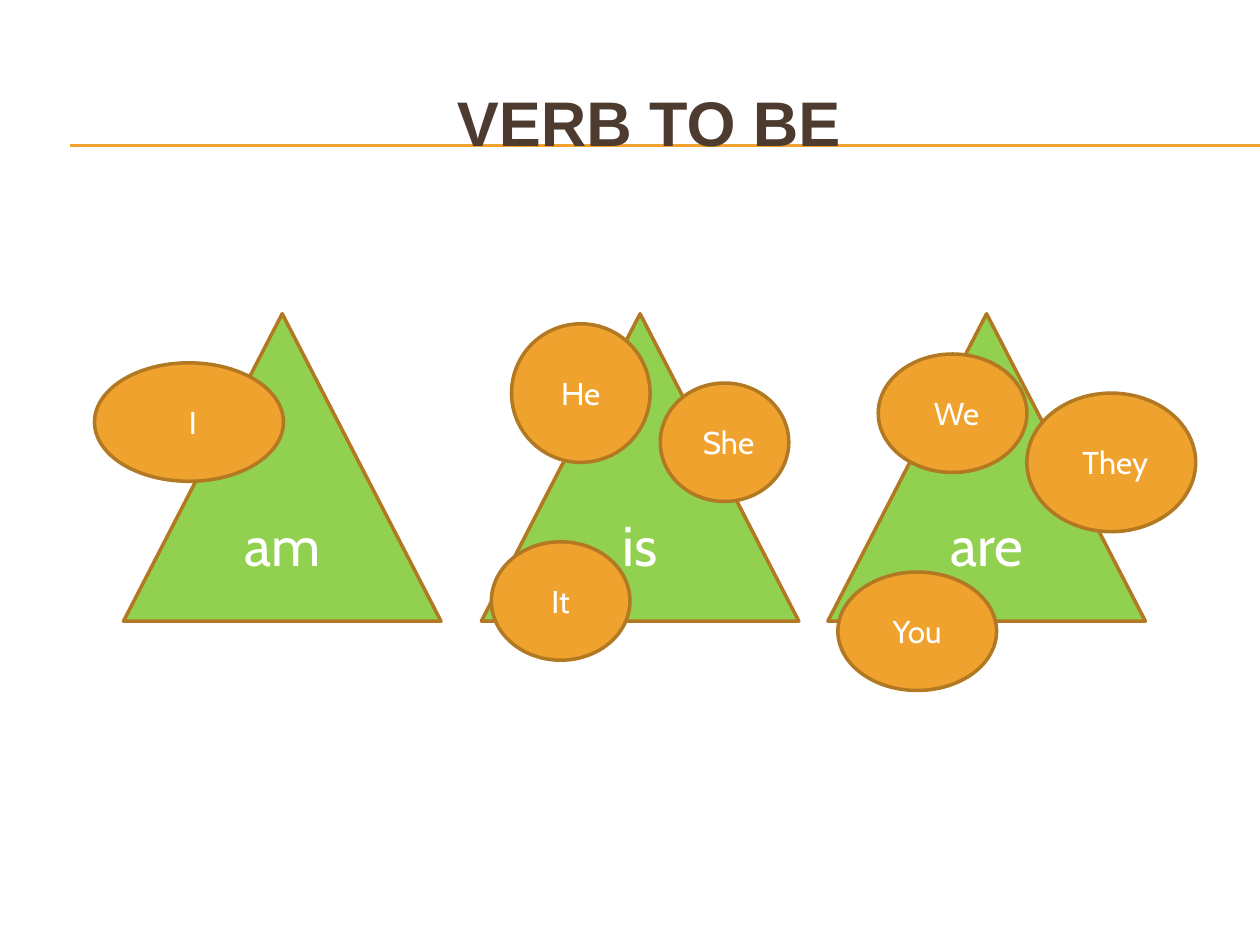
from dataclasses import dataclass

from lxml import etree
from pptx import Presentation
from pptx.dml.color import RGBColor
from pptx.enum.shapes import MSO_CONNECTOR, MSO_SHAPE
from pptx.enum.text import MSO_ANCHOR, PP_ALIGN
from pptx.oxml.ns import qn
from pptx.shapes.autoshape import Shape
from pptx.slide import Slide
from pptx.util import Pt

TRIANGLE = MSO_SHAPE.ISOSCELES_TRIANGLE
ELLIPSE = MSO_SHAPE.OVAL
STRAIGHT = MSO_CONNECTOR.STRAIGHT
CENTER = PP_ALIGN.CENTER
MIDDLE = MSO_ANCHOR.MIDDLE


@dataclass(frozen=True)
class Theme:
    orange: RGBColor = RGBColor(0xF0, 0xA2, 0x2E)
    green: RGBColor = RGBColor(0x92, 0xD0, 0x50)
    outline: RGBColor = RGBColor(0xB2, 0x78, 0x22)
    brown: RGBColor = RGBColor(0x4E, 0x3B, 0x30)
    white: RGBColor = RGBColor(0xFF, 0xFF, 0xFF)
    title_font: str = "Arial"
    body_font: str = "Cabin"
    title_size: float = 36
    verb_size: float = 32
    pronoun_size: float = 18
    outline_width: float = 2
    rule_width: float = 0.75


@dataclass(frozen=True)
class Label:
    text: str
    left: float
    top: float
    width: float
    height: float


THEME = Theme()
PAGE_WIDTH, PAGE_HEIGHT = 720, 540
RULE_LEFT = 40.3
RULE_TOPS = (82.8, 83.5)
TITLE = Label("VERB TO BE ", 23.76, 36, 684, 66.24)
VERBS = [
    Label(text, left, 179.28, 181.44, 175.68)
    for text, left in (("am", 70.56), ("is", 275.04), ("are", 473.04))
]
PRONOUNS = [
    Label("He", 292.32, 185.04, 79.2, 79.2),
    Label("She ", 377.28, 218.88, 73.44, 67.68),
    Label("It", 280.8, 309.6, 79.2, 67.68),
    Label("I ", 54, 207.36, 108, 67.68),
    Label("You", 478.8, 326.88, 90.72, 67.68),
    Label("We ", 501.84, 202.32, 84.96, 67.68),
    Label("They ", 586.8, 224.64, 96.48, 79.2),
]


def write_text(box: Shape, text: str, font: str, size: float,
               color: RGBColor, bold: bool = False) -> None:
    frame = box.text_frame
    frame.text = text
    frame.word_wrap = True
    frame.vertical_anchor = MIDDLE
    para = frame.paragraphs[0]
    para.alignment = CENTER
    para._p.get_or_add_pPr().set("rtl", "1")
    span = para.runs[0]
    span.font.name = font
    span.font.size = Pt(size)
    span.font.bold = bold
    span.font.color.rgb = color


def draw_rule(page: Slide, top: float) -> None:
    rule = page.shapes.add_connector(
        STRAIGHT, Pt(RULE_LEFT), Pt(top), Pt(PAGE_WIDTH), Pt(top))
    rule.line.color.rgb = THEME.orange
    rule.line.width = Pt(THEME.rule_width)
    etree.SubElement(rule._element.spPr, qn("a:effectLst"))


def draw_title(page: Slide, title: Label) -> None:
    box = page.shapes.add_textbox(
        Pt(title.left), Pt(title.top), Pt(title.width), Pt(title.height))
    write_text(box, title.text, THEME.title_font, THEME.title_size,
               THEME.brown, bold=True)


def draw_label(page: Slide, label: Label, kind: MSO_SHAPE,
               fill: RGBColor, size: float) -> None:
    shape = page.shapes.add_shape(
        kind, Pt(label.left), Pt(label.top), Pt(label.width), Pt(label.height))
    shape.shadow.inherit = False
    shape.fill.solid()
    shape.fill.fore_color.rgb = fill
    shape.line.color.rgb = THEME.outline
    shape.line.width = Pt(THEME.outline_width)
    write_text(shape, label.text, THEME.body_font, size, THEME.white)


def main() -> None:
    deck = Presentation()
    deck.slide_width, deck.slide_height = Pt(PAGE_WIDTH), Pt(PAGE_HEIGHT)
    page = deck.slides.add_slide(deck.slide_layouts[6])
    for top in RULE_TOPS:
        draw_rule(page, top)
    draw_title(page, TITLE)
    for verb in VERBS:
        draw_label(page, verb, TRIANGLE, THEME.green, THEME.verb_size)
    for pronoun in PRONOUNS:
        draw_label(page, pronoun, ELLIPSE, THEME.orange, THEME.pronoun_size)
    deck.save("out.pptx")


if __name__ == "__main__":
    main()
